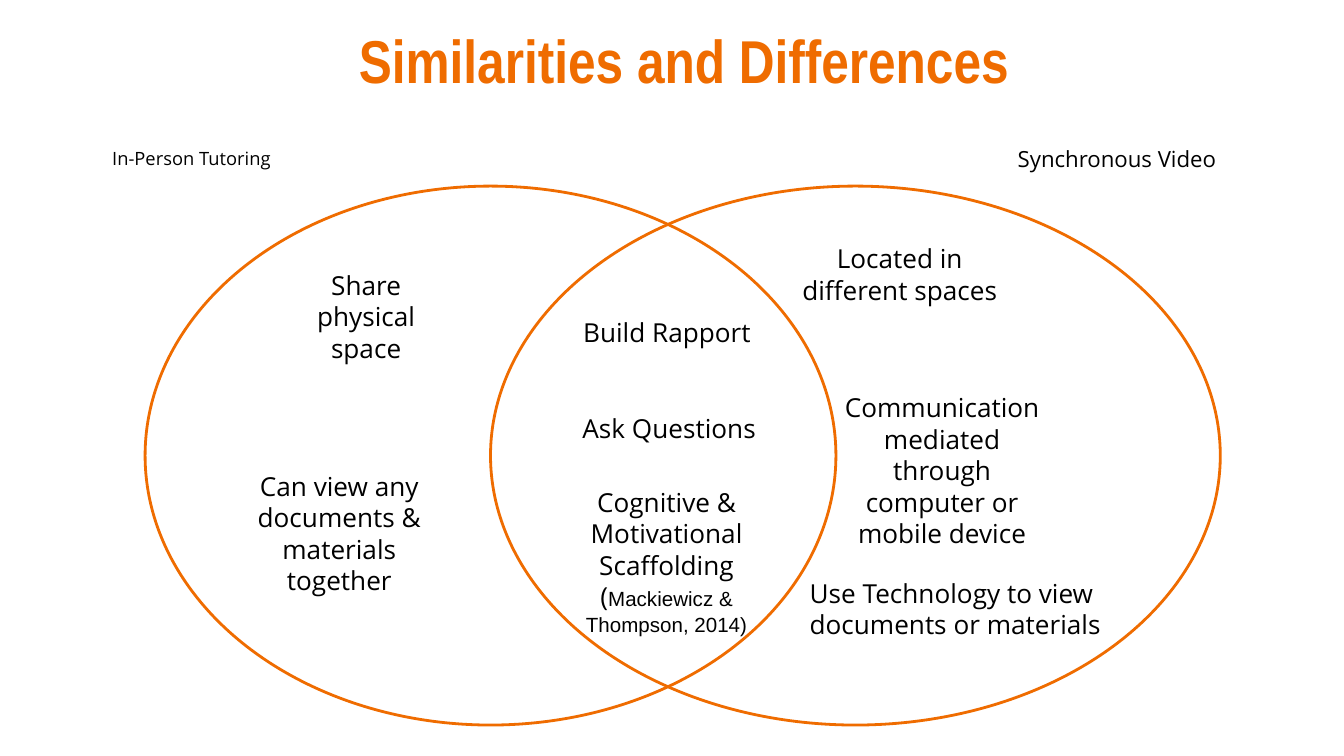
"""Build a Venn diagram slide comparing two forms of tutoring."""
from dataclasses import dataclass

from pptx import Presentation
from pptx.dml.color import RGBColor
from pptx.enum.shapes import MSO_SHAPE
from pptx.enum.text import MSO_ANCHOR, MSO_AUTO_SIZE, PP_ALIGN
from pptx.util import Inches, Pt

OVAL = MSO_SHAPE.OVAL
TOP = MSO_ANCHOR.TOP
LEFT, CENTER = PP_ALIGN.LEFT, PP_ALIGN.CENTER
NO_FIT, GROW = MSO_AUTO_SIZE.NONE, MSO_AUTO_SIZE.SHAPE_TO_FIT_TEXT
COLORS = {"accent": "EF6C00", "text": "000000", "background": "FFFFFF"}
BODY_FONT, TITLE_FONT, CITATION_FONT = "Open Sans", "Arial Narrow", "Arial"
SLIDE_WIDTH = Inches(10)
SLIDE_HEIGHT = SLIDE_WIDTH * 9 // 16
COLUMNS = 100
CELL = SLIDE_WIDTH // COLUMNS
COMPARISON_LAYOUT = 4


@dataclass(frozen=True)
class Area:
    """A rectangle in square grid cells, 100 to the slide's width."""
    column: float
    row: float
    columns: float
    rows: float

    def emu(self) -> list[int]:
        """Convert the area to left, top, width and height."""
        return [round(n * CELL) for n in (self.column, self.row, self.columns, self.rows)]


@dataclass(frozen=True)
class Heading:
    """Text for a layout placeholder."""
    placeholder: int
    text: str
    area: Area
    size: float
    font: str = BODY_FONT
    color: str = "text"
    bold: bool = False
    spacing: float = 1.0
    space_after: float = 0


@dataclass(frozen=True)
class Point:
    """A statement inside the diagram, with an optional citation."""
    text: str
    area: Area
    align: PP_ALIGN = CENTER
    citation: str = ""


HEADINGS = [
    Heading(0, "Similarities and Differences", Area(4.3, 0.7, 93.2, 7.7), 32.4,
            TITLE_FONT, "accent", True),
    Heading(1, "In-Person Tutoring", Area(6.8, 10.05, 14.9, 6.1), 9.8,
            spacing=0.95, space_after=12),
    Heading(3, "Synchronous Video", Area(73.8, 9.7, 18.6, 6.7), 11.9,
            spacing=1.05, space_after=12),
]
CIRCLES = [Area(10.8, 13.85, 51.4, 40.1), Area(36.5, 13.85, 54.3, 40.1)]
SHARED = [
    Point("Build Rapport", Area(42.4, 22.55, 14.9, 4.4), LEFT),
    Point("Ask Questions", Area(41.1, 29.7, 17.4, 4.4)),
    Point("Cognitive & Motivational Scaffolding (", Area(40, 35.2, 19.2, 13.3),
          citation="Mackiewicz & Thompson, 2014)"),
]
IN_PERSON = [
    Point("Share physical space", Area(20.45, 19.05, 13.6, 9.1)),
    Point("Can view any documents & materials together", Area(17.55, 34, 15.4, 11.4)),
]
VIDEO = [
    Point("Communication mediated through computer or mobile device",
          Area(61.65, 28.15, 16.9, 13.8)),
    Point("Located in different spaces", Area(58.5, 17.05, 16.9, 6.7)),
    Point("Use Technology to view documents or materials",
          Area(59.25, 41.95, 25.1, 6.7), LEFT),
]


def color(name: str) -> RGBColor:
    """Look up a named colour."""
    return RGBColor.from_string(COLORS[name])


def style_font(font, name: str, size: float, color_name: str, bold: bool = False) -> None:
    """Set the look of a paragraph's or run's font."""
    font.name, font.size, font.bold = name, Pt(size), bold
    font.color.rgb = color(color_name)


def set_frame(frame, fit: MSO_AUTO_SIZE) -> None:
    """Give a text frame wrapping, equal insets and a top anchor."""
    frame.word_wrap, frame.auto_size, frame.vertical_anchor = True, fit, TOP
    frame.margin_left = frame.margin_right = CELL
    frame.margin_top = frame.margin_bottom = CELL


def fill_heading(slide, heading: Heading) -> None:
    """Move, fill and format a placeholder."""
    holder = slide.placeholders[heading.placeholder]
    holder.left, holder.top, holder.width, holder.height = heading.area.emu()
    holder.text_frame.text = heading.text
    set_frame(holder.text_frame, NO_FIT)
    paragraph = holder.text_frame.paragraphs[0]
    paragraph.alignment = CENTER
    paragraph.line_spacing = heading.spacing
    paragraph.space_before, paragraph.space_after = Pt(0), Pt(heading.space_after)
    style_font(paragraph.font, heading.font, heading.size, heading.color, heading.bold)


def draw_circle(slide, area: Area) -> None:
    """Draw one outlined set of the diagram."""
    circle = slide.shapes.add_shape(OVAL, *area.emu())
    circle.shadow.inherit = False
    circle.fill.background()
    circle.line.color.rgb = color("accent")
    circle.line.width = Pt(1.5)


def draw_point(slide, point: Point) -> None:
    """Write one statement and its citation."""
    frame = slide.shapes.add_textbox(*point.area.emu()).text_frame
    set_frame(frame, GROW)
    paragraph = frame.paragraphs[0]
    paragraph.alignment = point.align
    statement = paragraph.add_run()
    statement.text = point.text
    if point.citation:
        citation = paragraph.add_run()
        citation.text = point.citation
        style_font(statement.font, BODY_FONT, 14, "text")
        style_font(citation.font, CITATION_FONT, 11, "text")
    else:
        style_font(paragraph.font, BODY_FONT, 14, "text")


def main() -> None:
    """Build and save the slide."""
    presentation = Presentation()
    presentation.slide_width, presentation.slide_height = SLIDE_WIDTH, SLIDE_HEIGHT
    slide = presentation.slides.add_slide(presentation.slide_layouts[COMPARISON_LAYOUT])
    slide.background.fill.solid()
    slide.background.fill.fore_color.rgb = color("background")
    for heading in HEADINGS:
        fill_heading(slide, heading)
    for holder in list(slide.placeholders):
        if not holder.text_frame.text:
            holder.element.getparent().remove(holder.element)
    for circle in CIRCLES:
        draw_circle(slide, circle)
    for point in SHARED + IN_PERSON + VIDEO:
        draw_point(slide, point)
    presentation.save("out.pptx")


if __name__ == "__main__":
    main()
